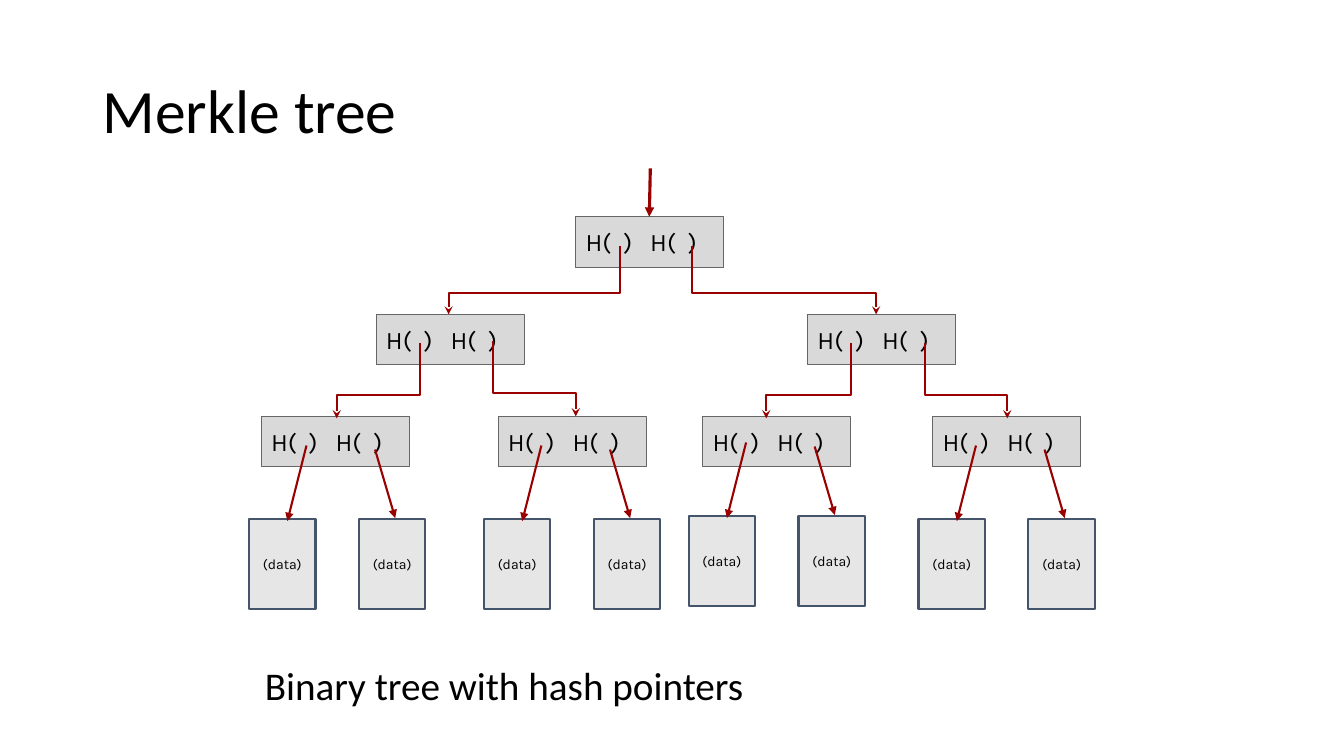
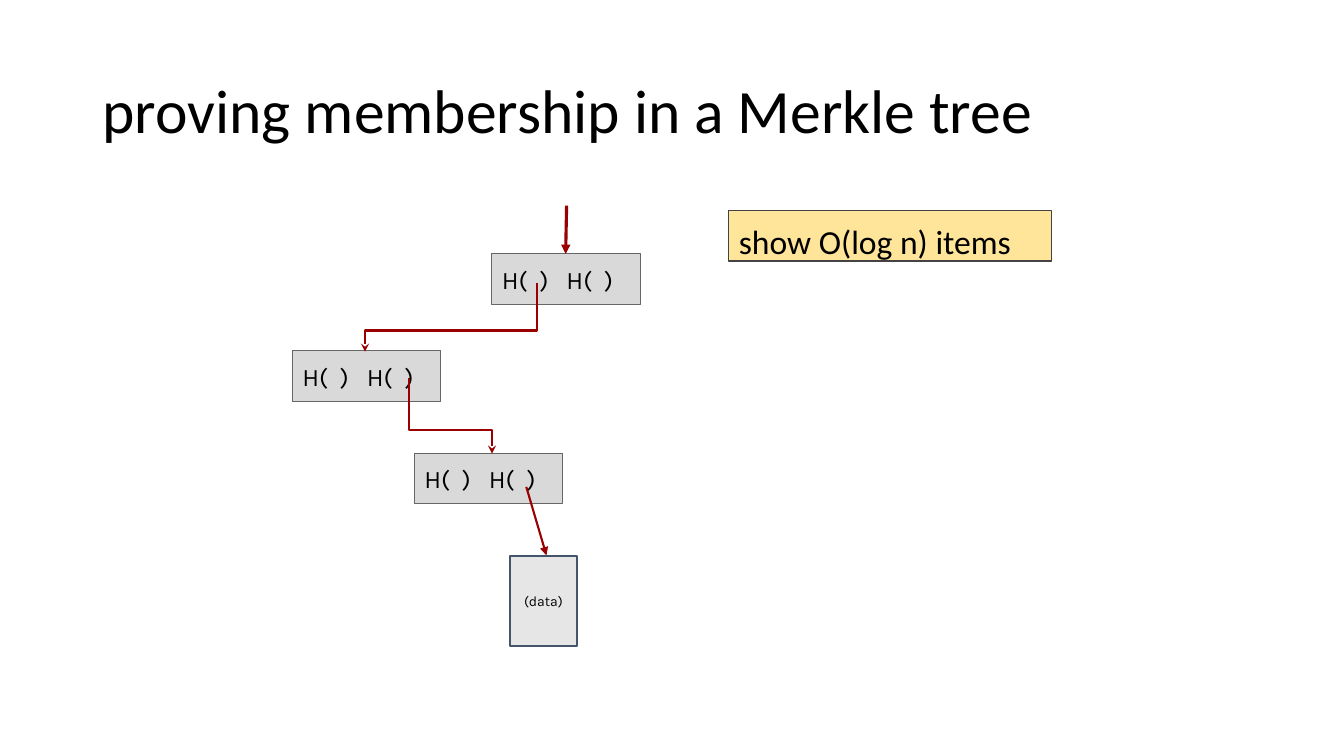
from typing import NamedTuple

import pptx
import pptx.dml.color
import pptx.enum.shapes
import pptx.enum.text
import pptx.oxml
import pptx.oxml.ns
import pptx.shapes.autoshape
import pptx.slide
import pptx.text.text
import pptx.util

Inches = pptx.util.Inches
Pt = pptx.util.Pt
RGBColor = pptx.dml.color.RGBColor
Align = pptx.enum.text.PP_ALIGN
Anchor = pptx.enum.text.MSO_ANCHOR

BLACK = RGBColor(0x00, 0x00, 0x00)
ARROW_RED = RGBColor(0x99, 0x00, 0x00)
NODE_FILL = RGBColor(0xD9, 0xD9, 0xD9)
NODE_LINE = RGBColor(0x66, 0x66, 0x66)
DATA_FILL = RGBColor(0xE7, 0xE6, 0xE6)
DATA_LINE = RGBColor(0x44, 0x54, 0x6A)
NOTE_FILL = RGBColor(0xFF, 0xE5, 0x99)
NOTE_LINE = RGBColor(0x43, 0x43, 0x43)

TITLE_FONT = "Calibri"
NODE_FONT = "Karla"
ELBOW_BEND = 0.69  # share of the drop above the horizontal part
DATA_GAP = 1.09  # between the left edges of two sibling data blocks


class Point(NamedTuple):
    x: float
    y: float


class Arrow(NamedTuple):
    start: Point
    end: Point


class BoxStyle(NamedTuple):
    width: float
    height: float
    fill: RGBColor
    line: RGBColor
    line_width: float
    font: str
    size: int
    align: Align = Align.LEFT
    anchor: Anchor = Anchor.TOP


NODE = BoxStyle(1.47, 0.5, NODE_FILL, NODE_LINE, 0.75, NODE_FONT, 18)
DATA = BoxStyle(0.66, 0.89, DATA_FILL, DATA_LINE, 1.5, NODE_FONT, 10,
                Align.CENTER, Anchor.MIDDLE)
NOTE = BoxStyle(3.2, 0.5, NOTE_FILL, NOTE_LINE, 0.75, TITLE_FONT, 24)

TREE_NODES = [
    Point(5.71, 2.15),
    Point(3.73, 3.12), Point(8.01, 3.12),
    Point(2.59, 4.13), Point(4.94, 4.13), Point(6.97, 4.13), Point(9.25, 4.13),
]
TREE_ELBOWS = [
    Arrow(Point(6.15, 2.44), Point(4.45, 3.12)),
    Arrow(Point(6.86, 2.44), Point(8.69, 3.12)),
    Arrow(Point(4.17, 3.4), Point(3.34, 4.15)),
    Arrow(Point(4.89, 3.38), Point(5.71, 4.13)),
    Arrow(Point(8.44, 3.4), Point(7.6, 4.15)),
    Arrow(Point(9.17, 3.4), Point(9.99, 4.15)),
]
TREE_DATA_PAIRS = [Point(2.47, 5.15), Point(4.8, 5.15), Point(6.83, 5.12), Point(9.11, 5.15)]

PROOF_NODES = [Point(4.88, 2.52), Point(2.9, 3.48), Point(4.11, 4.5)]
PROOF_ELBOWS = [
    Arrow(Point(5.33, 2.81), Point(3.62, 3.49)),
    Arrow(Point(4.06, 3.75), Point(4.88, 4.5)),
]


def write(frame: pptx.text.text.TextFrame, text: str, font: str, size: int,
          align: Align, anchor: Anchor) -> pptx.text.text._Paragraph:
    frame.word_wrap = True
    frame.vertical_anchor = anchor
    paragraph = frame.paragraphs[0]
    paragraph.text = text
    paragraph.alignment = align
    paragraph.font.name = font
    paragraph.font.size = Pt(size)
    paragraph.font.color.rgb = BLACK
    return paragraph


def add_label(slide: pptx.slide.Slide, text: str, corner: Point, width: float, height: float,
              size: int, align: Align, anchor: Anchor) -> pptx.text.text._Paragraph:
    label = slide.shapes.add_textbox(Inches(corner.x), Inches(corner.y),
                                     Inches(width), Inches(height))
    paragraph = write(label.text_frame, text, TITLE_FONT, size, align, anchor)
    paragraph.line_spacing = 0.9
    return paragraph


def add_titled_slide(deck: pptx.presentation.Presentation, title: str) -> pptx.slide.Slide:
    slide = deck.slides.add_slide(deck.slide_layouts[6])
    add_label(slide, title, Point(0.92, 0.4), 11.5, 1.45, 44, Align.LEFT, Anchor.MIDDLE)
    return slide


def add_box(slide: pptx.slide.Slide, text: str, corner: Point, style: BoxStyle) -> None:
    box = slide.shapes.add_shape(
        pptx.enum.shapes.MSO_SHAPE.RECTANGLE, Inches(corner.x), Inches(corner.y),
        Inches(style.width), Inches(style.height))
    box.shadow.inherit = False
    box.fill.solid()
    box.fill.fore_color.rgb = style.fill
    box.line.color.rgb = style.line
    box.line.width = Pt(style.line_width)
    frame = box.text_frame
    frame.margin_left = frame.margin_right = Inches(0.1)
    frame.margin_top = frame.margin_bottom = Inches(0.1)
    write(frame, text, style.font, style.size, style.align, style.anchor)


def style_arrow(shape: pptx.shapes.base.BaseShape, width: float, head: str) -> None:
    shape.line.color.rgb = ARROW_RED
    shape.line.width = Pt(width)
    outline = shape.element.spPr.get_or_add_ln()
    tail_end = pptx.oxml.parse_xml(
        f'<a:tailEnd {pptx.oxml.ns.nsdecls("a")} type="{head}"/>')
    outline.append(tail_end)


def add_arrow(slide: pptx.slide.Slide, arrow: Arrow, width: float = 1.5) -> None:
    connector = slide.shapes.add_connector(
        pptx.enum.shapes.MSO_CONNECTOR.STRAIGHT,
        *(Inches(value) for point in arrow for value in point))
    style_arrow(connector, width, "triangle")
    connector.element.spPr.append(
        pptx.oxml.parse_xml(f'<a:effectLst {pptx.oxml.ns.nsdecls("a")}/>'))


def add_elbow(slide: pptx.slide.Slide, arrow: Arrow) -> None:
    """Draw a hash pointer that goes down, across and down again."""
    start, end = arrow
    bend = start.y + ELBOW_BEND * (end.y - start.y)
    corners = [Point(start.x, bend), Point(end.x, bend), end]
    builder = slide.shapes.build_freeform(Inches(start.x), Inches(start.y))
    builder.add_line_segments([(Inches(x), Inches(y)) for x, y in corners], close=False)
    elbow = builder.convert_to_shape()
    elbow.shadow.inherit = False
    elbow.fill.background()
    style_arrow(elbow, 1.5, "stealth")


def add_left_data(slide: pptx.slide.Slide, corner: Point) -> None:
    x, y = corner
    add_box(slide, "(data)", corner, DATA)
    add_arrow(slide, Arrow(Point(x + 0.57, y - 0.73), Point(x + 0.38, y + 0.02)))


def add_right_data(slide: pptx.slide.Slide, corner: Point) -> None:
    x, y = corner
    add_box(slide, "(data)", corner, DATA)
    add_arrow(slide, Arrow(Point(x + 0.16, y - 0.69), Point(x + 0.36, y - 0.01)))


def add_hash_nodes(slide: pptx.slide.Slide, nodes: list[Point], elbows: list[Arrow]) -> None:
    """Draw the nodes, root first, with the pointers between them and to the root."""
    for node in nodes:
        add_box(slide, "H(  )   H(  )", node, NODE)
    for elbow in elbows:
        add_elbow(slide, elbow)
    root = nodes[0]
    root_pointer = Arrow(Point(root.x + 0.74, root.y - 0.48), Point(root.x + 0.73, root.y))
    add_arrow(slide, root_pointer, 2.25)


def build_tree_slide(deck: pptx.presentation.Presentation) -> None:
    slide = add_titled_slide(deck, "Merkle tree")
    add_hash_nodes(slide, TREE_NODES, TREE_ELBOWS)
    for pair in TREE_DATA_PAIRS:
        add_left_data(slide, pair)
        add_right_data(slide, Point(pair.x + DATA_GAP, pair.y))
    caption = add_label(slide, "Binary tree with hash pointers", Point(0, 6.56), 10, 1.02,
                        28, Align.CENTER, Anchor.TOP)
    caption.space_before = Pt(10)


def build_proof_slide(deck: pptx.presentation.Presentation) -> None:
    slide = add_titled_slide(deck, "proving membership in a Merkle tree")
    add_hash_nodes(slide, PROOF_NODES, PROOF_ELBOWS)
    add_right_data(slide, Point(5.06, 5.52))
    add_box(slide, "show O(log n) items", Point(7.23, 2.09), NOTE)


def main() -> None:
    deck = pptx.Presentation()
    deck.slide_width = Inches(13.33)
    deck.slide_height = Inches(7.5)
    build_tree_slide(deck)
    build_proof_slide(deck)
    deck.save("out.pptx")


if __name__ == "__main__":
    main()
